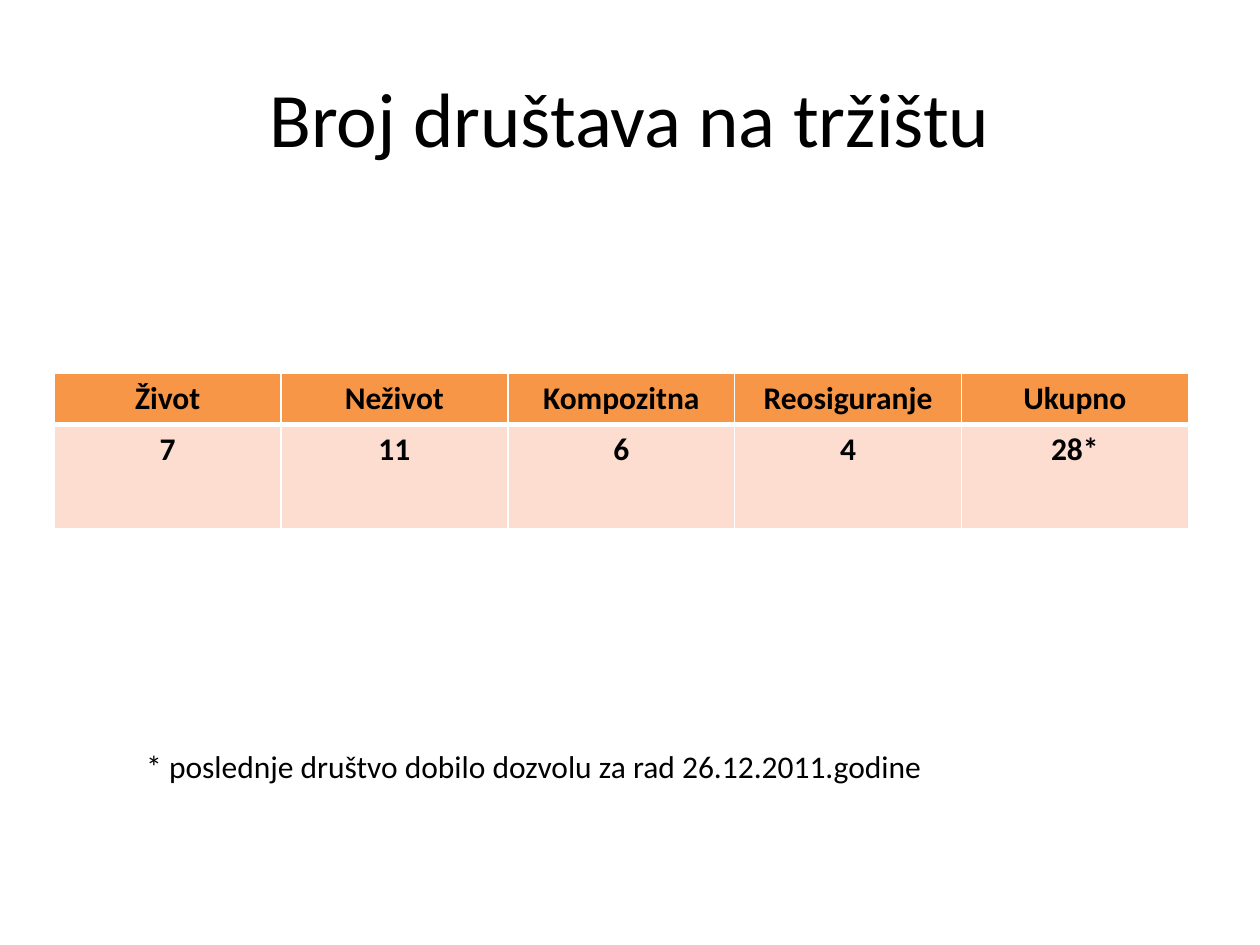
import pptx
import pptx.dml.color
import pptx.enum.text
import pptx.oxml.ns
import pptx.util
import lxml.etree

Pt = pptx.util.Pt
PP_ALIGN = pptx.enum.text.PP_ALIGN
MSO_ANCHOR = pptx.enum.text.MSO_ANCHOR

COLORS = {
    "text": "000000",
    "header": "F79646",
    "body": "FCDDCF",
    "border": "FFFFFF",
}
TITLE_FORMAT = {"name": "Calibri", "size": Pt(44), "bold": False}
CELL_FORMAT = {"name": "Calibri", "size": Pt(18), "bold": True}
NOTE_FORMAT = {"name": "Calibri", "size": Pt(18), "bold": False}

COMPANY_COUNTS = [
    ["Život", "Neživot", "Kompozitna", "Reosiguranje", "Ukupno"],
    ["7", "11", "6", "4", "28*"],
]
ROW_HEIGHTS = [29.2, 60]


def rgb(name):
    return pptx.dml.color.RGBColor.from_string(COLORS[name])


def write_text(text_frame, text, font_format, alignment):
    text_frame.text = text
    paragraph = text_frame.paragraphs[0]
    paragraph.alignment = alignment
    font = paragraph.runs[0].font
    for attribute, value in font_format.items():
        setattr(font, attribute, value)
    font.color.rgb = rgb("text")


def set_borders(cell, widths):
    properties = cell._tc.get_or_add_tcPr()
    qn = pptx.oxml.ns.qn
    for side, width in widths.items():
        line = lxml.etree.SubElement(properties, qn(f"a:ln{side}"), w=str(Pt(width)))
        solid_fill = lxml.etree.SubElement(line, qn("a:solidFill"))
        lxml.etree.SubElement(solid_fill, qn("a:srgbClr"), val=COLORS["border"])


def add_title(slide, left, top, width, height):
    title = slide.shapes.title
    title.left, title.top = Pt(left), Pt(top)
    title.width, title.height = Pt(width), Pt(height)
    title.text_frame.vertical_anchor = MSO_ANCHOR.MIDDLE
    write_text(title.text_frame, "Broj društava na tržištu", TITLE_FORMAT, PP_ALIGN.CENTER)


def add_count_table(slide, left, top, width):
    row_count, column_count = len(COMPANY_COUNTS), len(COMPANY_COUNTS[0])
    table = slide.shapes.add_table(
        row_count, column_count, Pt(left), Pt(top), Pt(width), Pt(sum(ROW_HEIGHTS))
    ).table
    for column in table.columns:
        column.width = Pt(width / column_count)
    for row_index, values in enumerate(COMPANY_COUNTS):
        is_header = row_index == 0
        table.rows[row_index].height = Pt(ROW_HEIGHTS[row_index])
        borders = {"L": 1, "R": 1, "T": 1 if is_header else 3, "B": 3 if is_header else 1}
        for column_index, value in enumerate(values):
            cell = table.cell(row_index, column_index)
            set_borders(cell, borders)
            cell.fill.solid()
            cell.fill.fore_color.rgb = rgb("header" if is_header else "body")
            write_text(cell.text_frame, value, CELL_FORMAT, PP_ALIGN.CENTER)


def add_footnote(slide, left, top, width, height):
    text_box = slide.shapes.add_textbox(Pt(left), Pt(top), Pt(width), Pt(height))
    text_frame = text_box.text_frame
    text_frame.word_wrap = False
    text_frame.auto_size = pptx.enum.text.MSO_AUTO_SIZE.SHAPE_TO_FIT_TEXT
    note = "* poslednje društvo dobilo dozvolu za rad 26.12.2011.godine"
    write_text(text_frame, note, NOTE_FORMAT, PP_ALIGN.LEFT)


def main():
    presentation = pptx.Presentation()
    presentation.slide_width, presentation.slide_height = Pt(720), Pt(540)
    slide = presentation.slides.add_slide(presentation.slide_layouts.get_by_name("Title Only"))
    add_title(slide, 36, 21.6, 648, 90)
    add_count_table(slide, 31, 213.2, 648)
    add_footnote(slide, 76.5, 423.5, 463, 29)
    presentation.save("out.pptx")


if __name__ == "__main__":
    main()
